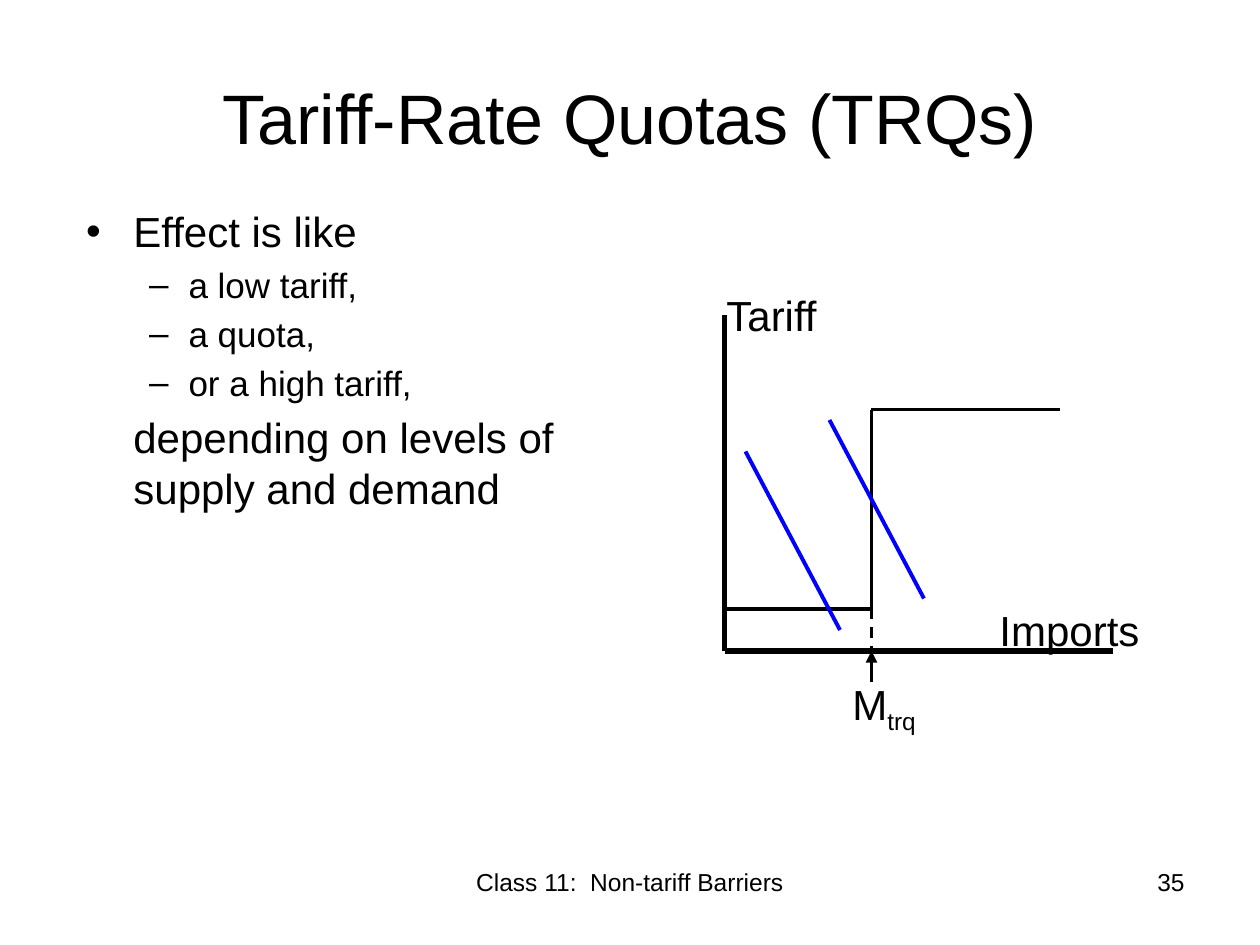
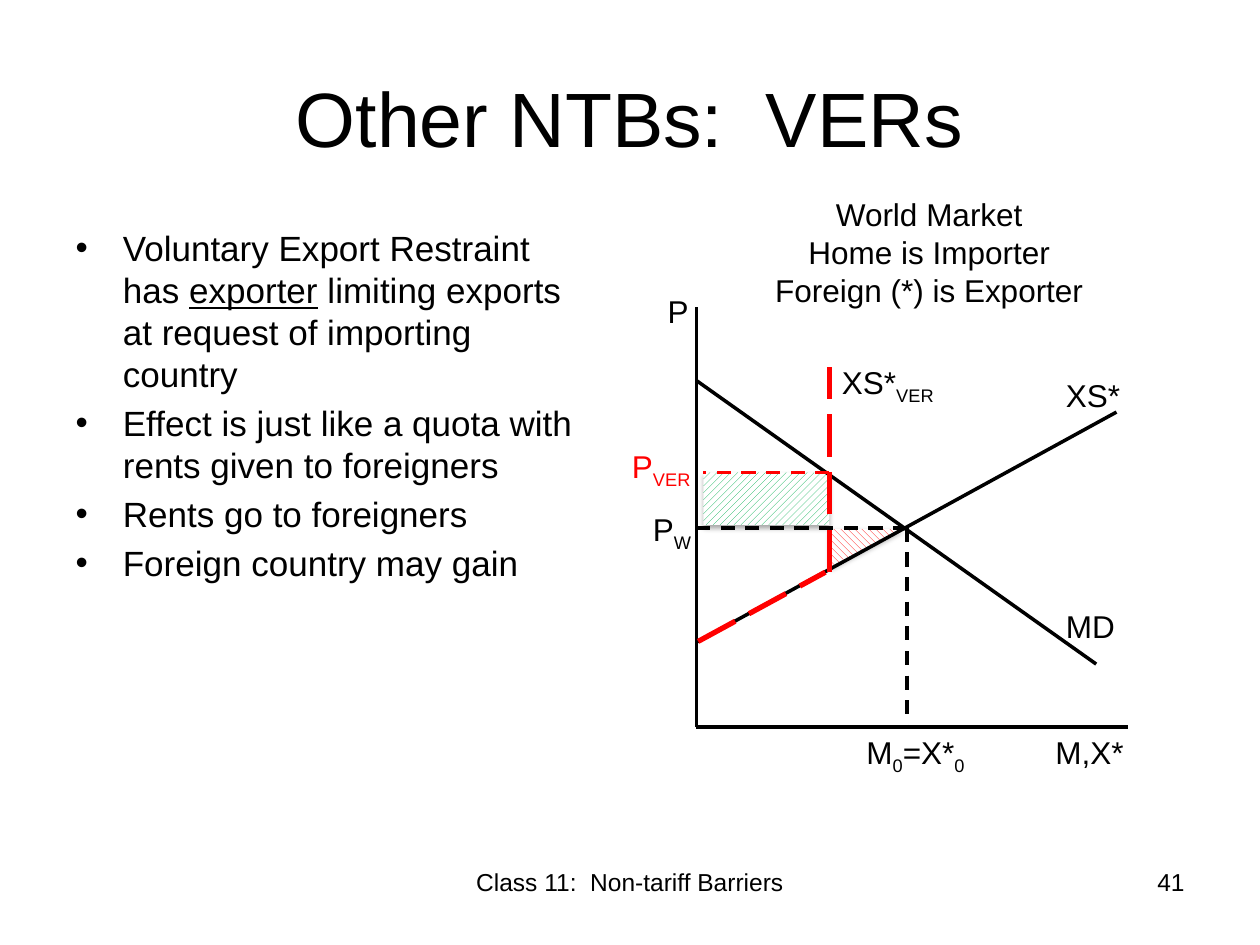
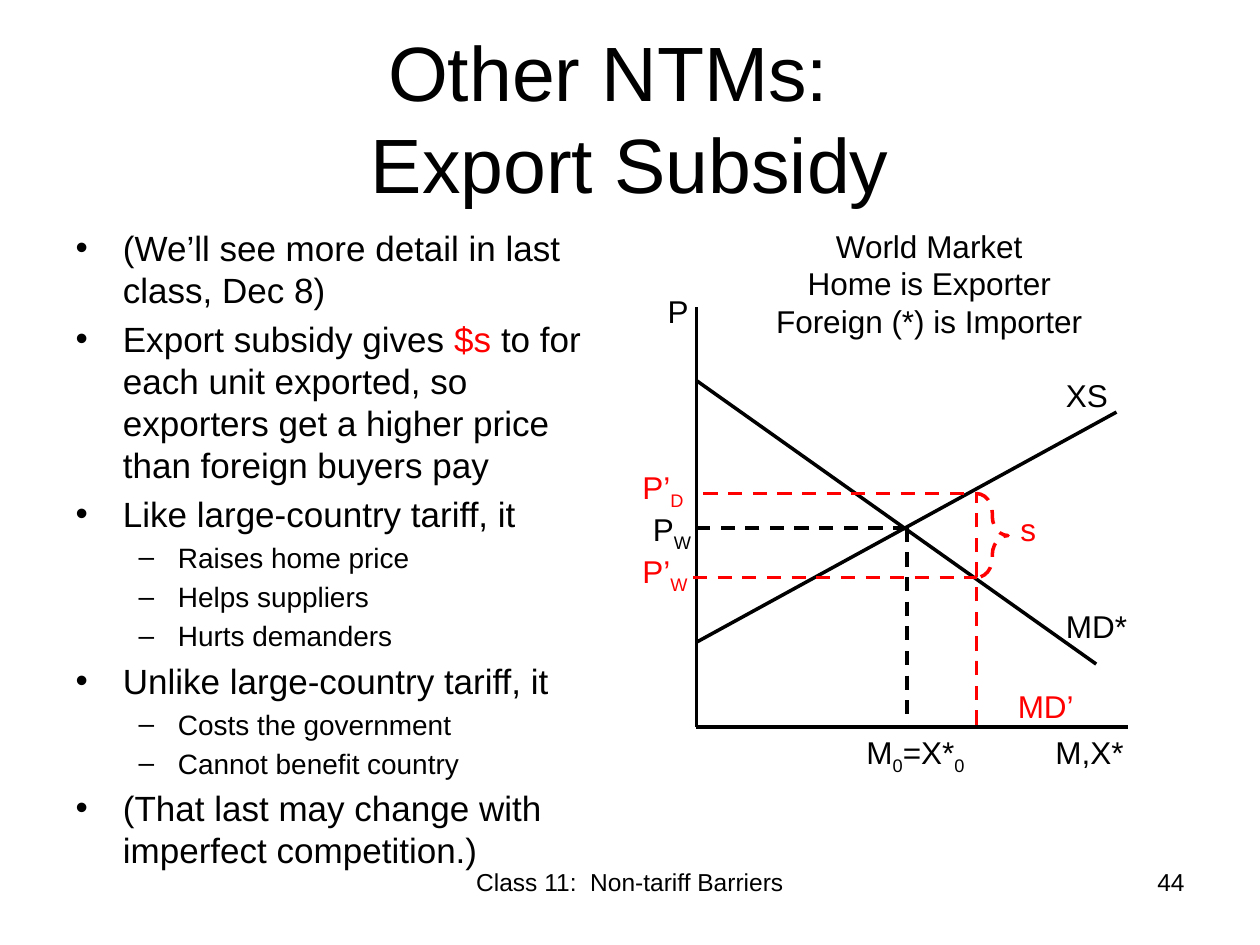
from dataclasses import dataclass
from typing import NamedTuple

from lxml.etree import SubElement
from pptx import Presentation
from pptx.dml.color import RGBColor
from pptx.enum.dml import MSO_LINE, MSO_PATTERN
from pptx.enum.shapes import MSO_CONNECTOR, MSO_SHAPE
from pptx.enum.text import MSO_ANCHOR, MSO_AUTO_SIZE, PP_ALIGN
from pptx.oxml.ns import qn
from pptx.util import Pt

FONT = "Arial"
BLACK = "000000"
WHITE = "FFFFFF"
RED = "FF0000"
BLUE = "0000FF"
GREEN = "00B050"
FOOTER = "Class 11:  Non-tariff Barriers"

AXIS_X, AXIS_Y = 398, 415.5
EQUILIBRIUM_X, WORLD_PRICE = 518.4, 301.6


class Box(NamedTuple):
    left: float
    top: float
    width: float
    height: float


class Span(NamedTuple):
    text: str
    color: str = BLACK
    underline: bool | None = None


class Item(NamedTuple):
    spans: tuple[Span, ...]
    level: int = 0
    bullet: bool = True


@dataclass(frozen=True)
class Line:
    start: tuple[float, float]
    end: tuple[float, float]
    width: float = 2
    color: str = BLACK
    dash: MSO_LINE | None = None
    arrow: bool = False


@dataclass(frozen=True)
class Label:
    text: str
    left: float
    top: float
    width: float = 54
    size: float = 18
    color: str = BLACK
    align: PP_ALIGN = PP_ALIGN.LEFT


@dataclass(frozen=True)
class Hatch:
    preset: MSO_SHAPE
    box: Box
    pattern: MSO_PATTERN
    color: str
    flipped: bool = False


TITLE_BOX = Box(36, 21.6, 648, 90)
BODY_BOX = Box(36, 126, 309, 356.4)


def rgb(color: str) -> RGBColor:
    return RGBColor.from_string(color)


def place(shape, box: Box) -> None:
    shape.left, shape.top, shape.width, shape.height = map(Pt, box)


def format_run(run, *, size: float, color: str = BLACK,
               underline: bool | None = None, subscript: bool = False) -> None:
    font = run.font
    font.name = FONT
    font.size = Pt(size)
    font.color.rgb = rgb(color)
    font.underline = underline
    if subscript:
        font._element.set("baseline", "-25000")


def write_text(paragraph, text: str, **formats) -> None:
    for position, part in enumerate(text.split("|")):
        if part:
            run = paragraph.add_run()
            run.text = part
            format_run(run, subscript=position % 2 == 1, **formats)


def add_label(slide, label: Label) -> None:
    lines = label.text.split("\n")
    height = len(lines) * label.size * 1.2 + 7.2
    shape = slide.shapes.add_textbox(
        *map(Pt, Box(label.left, label.top, label.width, height)))
    frame = shape.text_frame
    frame.word_wrap = True
    frame.auto_size = MSO_AUTO_SIZE.SHAPE_TO_FIT_TEXT
    for position, line in enumerate(lines):
        paragraph = frame.add_paragraph() if position else frame.paragraphs[0]
        paragraph.alignment = label.align
        write_text(paragraph, line, size=label.size, color=label.color)


def style_line(line_format, color: str, width: float, dash: MSO_LINE | None) -> None:
    line_format.color.rgb = rgb(color)
    line_format.width = Pt(width)
    if dash is not None:
        line_format.dash_style = dash


def add_line(slide, line: Line) -> None:
    connector = slide.shapes.add_connector(
        MSO_CONNECTOR.STRAIGHT, *map(Pt, line.start + line.end))
    style_line(connector.line, line.color, line.width, line.dash)
    properties = connector._element.spPr
    if line.arrow:
        SubElement(properties.find(qn("a:ln")), qn("a:tailEnd"), type="triangle")
    SubElement(properties, qn("a:effectLst"))


def add_hatch(slide, hatch: Hatch) -> None:
    shape = slide.shapes.add_shape(hatch.preset, *map(Pt, hatch.box))
    shape.fill.patterned()
    shape.fill.pattern = hatch.pattern
    shape.fill.fore_color.rgb = rgb(hatch.color)
    shape.fill.back_color.rgb = rgb(WHITE)
    shape.line.fill.background()
    shape.shadow.inherit = False
    properties = shape._element.spPr
    if hatch.flipped:
        properties.xfrm.set("flipV", "1")
    shadow = SubElement(
        properties.find(qn("a:effectLst")), qn("a:outerShdw"),
        blurRad=str(Pt(3.1)), dist=str(Pt(1.8)), dir="5400000", rotWithShape="0")
    shadow_color = SubElement(shadow, qn("a:srgbClr"), val=BLACK)
    SubElement(shadow_color, qn("a:alpha"), val="35000")


def add_brace(slide, box: Box) -> None:
    brace = slide.shapes.add_shape(MSO_SHAPE.LEFT_BRACE, *map(Pt, box))
    brace.rotation = 180
    brace.adjustments[0] = 0.61
    brace.fill.background()
    brace.shadow.inherit = False
    style_line(brace.line, RED, 2, MSO_LINE.DASH)


def bullet(text: str, level: int = 0) -> Item:
    return Item((Span(text),), level)


def fill_body(body, items: list[Item], sizes: tuple[float, float]) -> None:
    frame = body.text_frame
    frame.auto_size = MSO_AUTO_SIZE.NONE
    for position, item in enumerate(items):
        paragraph = frame.add_paragraph() if position else frame.paragraphs[0]
        paragraph.level = item.level
        for span in item.spans:
            write_text(paragraph, span.text, size=sizes[item.level],
                       color=span.color, underline=span.underline)
        if not item.bullet:
            properties = paragraph._p.get_or_add_pPr()
            properties.set("indent", "0")
            SubElement(properties, qn("a:buNone"))


def add_slide(presentation, number: int, title: str, items: list[Item], *,
              title_size: float = 44, body_box: Box = BODY_BOX,
              sizes: tuple[float, float] = (20, 16)):
    slide = presentation.slides.add_slide(presentation.slide_layouts[1])
    heading, body = slide.placeholders
    place(heading, TITLE_BOX)
    place(body, body_box)
    frame = heading.text_frame
    frame.auto_size = MSO_AUTO_SIZE.NONE
    frame.vertical_anchor = MSO_ANCHOR.MIDDLE
    frame.text = title
    frame.paragraphs[0].alignment = PP_ALIGN.CENTER
    for run in frame.paragraphs[0].runs:
        format_run(run, size=title_size)
    fill_body(body, items, sizes)
    add_label(slide, Label(FOOTER, 246, 492, 228, 14, align=PP_ALIGN.CENTER))
    add_label(slide, Label(str(number), 516, 492, 168, 14, align=PP_ALIGN.RIGHT))
    return slide


def draw_all(slide, lines: list[Line], labels: list[Label]) -> None:
    for line in lines:
        add_line(slide, line)
    for label in labels:
        add_label(slide, label)


def draw_market(slide, supply: str, demand: str, caption: str, caption_top: float) -> None:
    origin = (AXIS_X, AXIS_Y)
    equilibrium = (EQUILIBRIUM_X, WORLD_PRICE)
    draw_all(slide, [
        Line(origin, (644.5, AXIS_Y)),
        Line(origin, (AXIS_X, 175.5)),
        Line(equilibrium, (EQUILIBRIUM_X, AXIS_Y), dash=MSO_LINE.DASH),
        Line((AXIS_X, 367), (638, 235.5)),
        Line((626.4, 379.5), (AXIS_X, 217.5)),
        Line(equilibrium, (AXIS_X, WORLD_PRICE), dash=MSO_LINE.DASH),
    ], [
        Label("P", 374.4, 163.5),
        Label(demand, 602, 343.5),
        Label(supply, 602, 211.5),
        Label(caption, 414, caption_top, 234, align=PP_ALIGN.CENTER),
        Label("M,X*", 596, AXIS_Y),
        Label("M|0|=X*|0", 488, AXIS_Y, 78),
        Label("P|W", 366, 288),
    ])


def build_tariff_quotas(presentation) -> None:
    slide = add_slide(presentation, 35, "Tariff-Rate Quotas (TRQs)", [
        bullet("Effect is like"),
        bullet("a low tariff,", 1),
        bullet("a quota,", 1),
        bullet("or a high tariff,", 1),
        Item((Span("depending on levels of supply and demand"),), bullet=False),
    ], title_size=40, body_box=Box(42, 114, 312, 192), sizes=(24, 20))
    axis_x, axis_y, quota_x, low_tariff, high_tariff = 414, 372, 498, 348, 234
    demand_lines = [
        Line((left, top), (left + 54, top + 102), 2.25, BLUE)
        for left, top in ((426, 258), (474, 240))
    ]
    draw_all(slide, [
        Line((axis_x, 180), (axis_x, axis_y), 3),
        Line((axis_x, axis_y), (636, axis_y), 3),
        Line((axis_x, low_tariff), (quota_x, low_tariff), 2.25),
        Line((quota_x, low_tariff), (quota_x, high_tariff), 2.25),
        Line((quota_x, high_tariff), (606, high_tariff), 2.25),
        Line((quota_x, low_tariff), (quota_x, axis_y), 1.5, dash=MSO_LINE.DASH),
        Line((quota_x, 390), (quota_x, axis_y), 2.25, arrow=True),
        *demand_lines,
    ], [
        Label("Imports", 564, 342, 126, 24),
        Label("Tariff", 408, 162, 126, 24),
        Label("M|trq", 480, 384, 126, 24),
    ])


def build_export_restraints(presentation) -> None:
    slide = add_slide(presentation, 41, "Other NTBs:  VERs", [
        Item((Span("Voluntary Export Restraint has "),
              Span("exporter", underline=True),
              Span(" limiting exports at request of importing country"))),
        bullet("Effect is just like a quota with rents given to foreigners"),
        bullet("Rents go to foreigners"),
        bullet("Foreign country may gain"),
    ])
    limit_x, limit_price, kink_y = 474, 270, 327
    add_hatch(slide, Hatch(
        MSO_SHAPE.RIGHT_TRIANGLE, Box(limit_x, 302.4, 42, 21.6),
        MSO_PATTERN.WIDE_DOWNWARD_DIAGONAL, RED, flipped=True))
    add_hatch(slide, Hatch(
        MSO_SHAPE.RECTANGLE, Box(402, limit_price, 72, 30),
        MSO_PATTERN.WIDE_UPWARD_DIAGONAL, GREEN))
    draw_market(slide, "XS*", "MD",
                "World Market\nHome is Importer\nForeign (*) is Exporter", 108)
    draw_all(slide, [
        Line((399, 366.5), (471.6, kink_y), 3, RED, MSO_LINE.LONG_DASH),
        Line((limit_x, kink_y), (limit_x, 210), 3, RED, MSO_LINE.LONG_DASH),
        Line((limit_x, limit_price), (402, limit_price), 2, RED, MSO_LINE.DASH),
    ], [
        Label("XS*|VER", limit_x, 204, 84),
        Label("P|VER", 354, 252, color=RED),
    ])


def build_export_subsidy(presentation) -> None:
    slide = add_slide(presentation, 44, "Other NTMs:  \vExport Subsidy", [
        bullet("(We’ll see more detail in last class, Dec 8)"),
        Item((Span("Export subsidy gives "),
              Span("$s", RED),
              Span(" to for each unit exported, so exporters get a higher price "
                   "than foreign buyers pay"))),
        bullet("Like large-country tariff, it"),
        bullet("Raises home price", 1),
        bullet("Helps suppliers", 1),
        bullet("Hurts demanders", 1),
        bullet("Unlike large-country tariff, it"),
        bullet("Costs the government", 1),
        bullet("Cannot benefit country", 1),
        bullet("(That last may change with imperfect competition.)"),
    ])
    draw_market(slide, "XS", "MD*",
                "World Market\nHome is Exporter\nForeign (*) is Importer", 126)
    subsidy_x, home_price, foreign_price = 558, 282, 330
    draw_all(slide, [
        Line((subsidy_x, 414), (subsidy_x, home_price), 2, RED, MSO_LINE.DASH),
        Line((402, home_price), (subsidy_x, home_price), 2, RED, MSO_LINE.DASH),
        Line((396, foreign_price), (subsidy_x, foreign_price), 2, RED, MSO_LINE.DASH),
    ], [
        Label("MD’", 574.5, 388.8, color=RED),
        Label("P’|W", 360, 312, color=RED),
        Label("P’|D", 360, 264, color=RED),
        Label("s", 576, 288, color=RED),
    ])
    add_brace(slide, Box(subsidy_x, home_price, 18, foreign_price - home_price))


def main() -> None:
    presentation = Presentation()
    presentation.slide_width = Pt(720)
    presentation.slide_height = Pt(540)
    build_tariff_quotas(presentation)
    build_export_restraints(presentation)
    build_export_subsidy(presentation)
    presentation.save("out.pptx")


if __name__ == "__main__":
    main()
